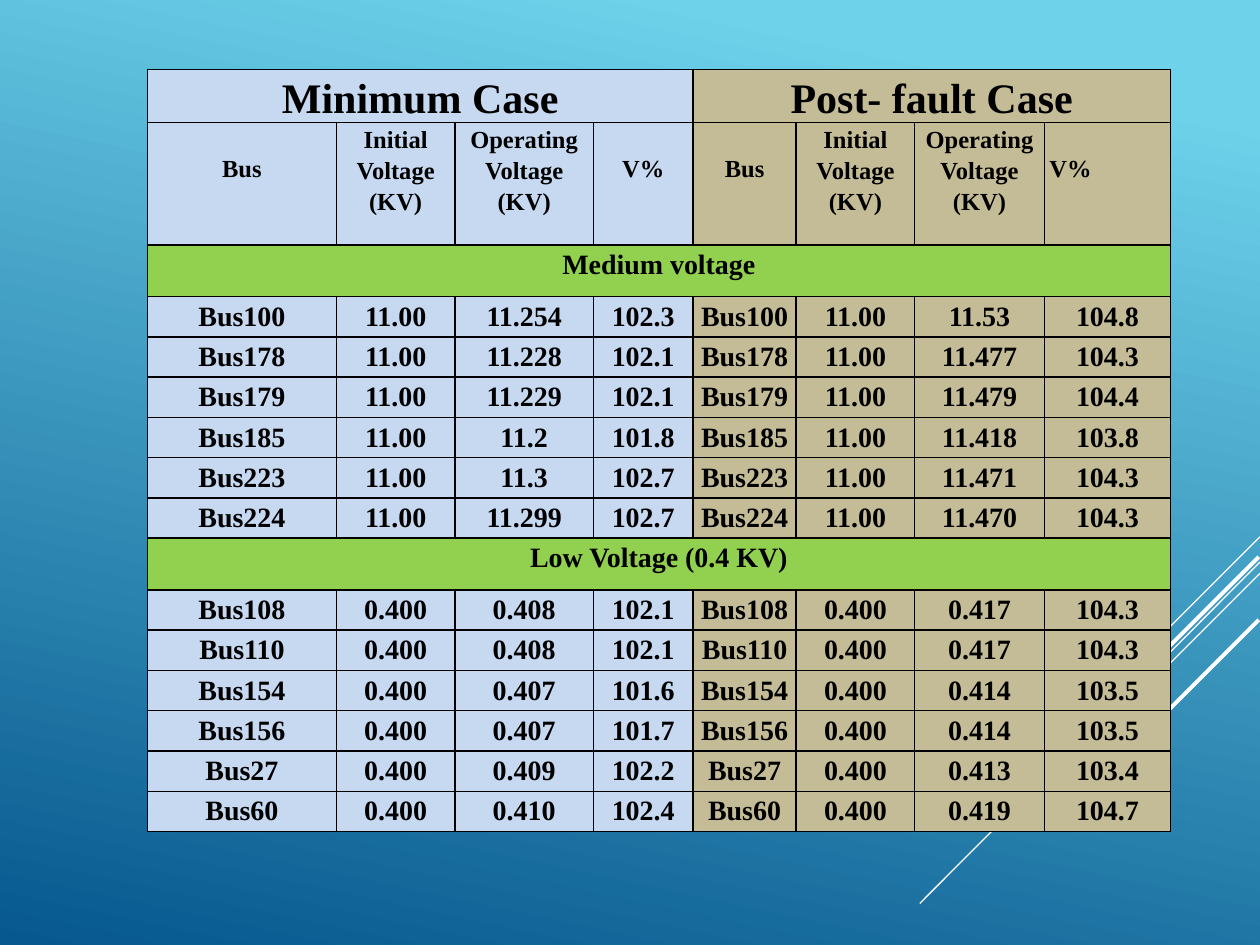
from typing import NamedTuple

from lxml.etree import SubElement as Sub
from pptx import Presentation
from pptx.dml.color import RGBColor
from pptx.enum.shapes import MSO_CONNECTOR as Conn
from pptx.enum.text import PP_ALIGN as Align
from pptx.oxml import parse_xml
from pptx.oxml.ns import nsdecls, qn
from pptx.util import Inches, Pt

BLUE, TAN, GREEN = "C6D9F1", "C4BC96", "92D050"
COLS = (1.5, 0.94, 1.1, 0.79, 0.82, 0.94, 1.03, 1)
HALF = len(COLS) // 2
HEADS = ("Bus", "Initial Voltage (KV)", "Operating Voltage (KV)", "V%")


class Ray(NamedTuple):
    x1: float
    y1: float
    x2: float
    y2: float
    width: float


class Read(NamedTuple):
    bus: str
    low: str
    low_pct: str
    post: str
    post_pct: str


class Group(NamedTuple):
    title: str
    base: str
    reads: tuple


RAYS = (
    Ray(10, 4.26, 9.17, 5.09, 0.75),
    Ray(10, 4.46, 7.3, 7.17, 0.75),
    Ray(10, 4.55, 8.28, 6.27, 0.75),
    Ray(9.99, 4.42, 8.42, 5.99, 2.25),
    Ray(9.99, 4.92, 8.85, 6.06, 2.25),
)
GROUPS = (
    Group("Medium voltage", "11.00", (
        Read("Bus100", "11.254", "102.3", "11.53", "104.8"),
        Read("Bus178", "11.228", "102.1", "11.477", "104.3"),
        Read("Bus179", "11.229", "102.1", "11.479", "104.4"),
        Read("Bus185", "11.2", "101.8", "11.418", "103.8"),
        Read("Bus223", "11.3", "102.7", "11.471", "104.3"),
        Read("Bus224", "11.299", "102.7", "11.470", "104.3"),
    )),
    Group("Low Voltage (0.4 KV)", "0.400", (
        Read("Bus108", "0.408", "102.1", "0.417", "104.3"),
        Read("Bus110", "0.408", "102.1", "0.417", "104.3"),
        Read("Bus154", "0.407", "101.6", "0.414", "103.5"),
        Read("Bus156", "0.407", "101.7", "0.414", "103.5"),
        Read("Bus27", "0.409", "102.2", "0.413", "103.4"),
        Read("Bus60", "0.410", "102.4", "0.419", "104.7"),
    )),
)


def rgb(code: str) -> RGBColor:
    """Turn a hex string into a colour."""
    return RGBColor.from_string(code)


def paint_back(slide) -> None:
    """Fill the background with the blue gradient."""
    fill = slide.background.fill
    fill.gradient()
    fill.gradient_angle = 258
    for stop, (pos, code) in zip(fill.gradient_stops, ((0.1, "6ED2EB"), (1, "06588E"))):
        stop.position = pos
        stop.color.rgb = rgb(code)


def draw_ray(slide, ray: Ray) -> None:
    """Draw one white diagonal line."""
    line = slide.shapes.add_connector(
        Conn.STRAIGHT, Inches(ray.x1), Inches(ray.y1), Inches(ray.x2), Inches(ray.y2))
    line.line.color.rgb = rgb("FFFFFF")
    line.line.width = Pt(ray.width)
    Sub(line._element.spPr, qn("a:effectLst"))


def style_cell(cell, code: str) -> None:
    """Give a cell its fill, margins and black borders."""
    cell.fill.solid()
    cell.fill.fore_color.rgb = rgb(code)
    cell.margin_left = cell.margin_right = Inches(0.04)
    cell.margin_top = cell.margin_bottom = 0
    props = cell._tc.get_or_add_tcPr()
    for spot, side in enumerate("LRTB"):
        props.insert(spot, parse_xml(
            f'<a:ln{side} {nsdecls("a")} w="{Pt(1)}"><a:solidFill>'
            f'<a:srgbClr val="000000"/></a:solidFill></a:ln{side}>'))


def write(cell, text: str, size: int) -> None:
    """Set bold, centred text in a cell."""
    cell.text_frame.text = text
    para = cell.text_frame.paragraphs[0]
    para.alignment = Align.CENTER
    para.line_spacing = 1.15
    font = para.runs[0].font
    font.name = "Times New Roman"
    font.size = Pt(size)
    font.bold = True
    font.color.rgb = rgb("000000")


def fill_row(table, row: int, texts: tuple, size: int, codes: tuple = (BLUE, TAN)) -> None:
    """Style a row and spread its texts evenly, merging cells to fit."""
    last = len(COLS) - 1
    for col in range(len(COLS)):
        style_cell(table.cell(row, col), codes[col * len(codes) // len(COLS)])
    span = len(COLS) // len(texts)
    for spot, text in enumerate(texts):
        cell = table.cell(row, spot * span)
        if span > 1:
            cell.merge(table.cell(row, min(spot * span + span - 1, last)))
        write(cell, text, size)


def draw_table(slide) -> None:
    """Draw the table of bus voltages."""
    tall = [0.37, 0.97]
    for group in GROUPS:
        tall += [0.41] + [0.32] * len(group.reads)
    table = slide.shapes.add_table(
        len(tall), len(COLS), Inches(1.17), Inches(0.55),
        Inches(sum(COLS)), Inches(sum(tall))).table
    table.first_row = table.horz_banding = False
    for col, width in zip(table.columns, COLS):
        col.width = Inches(width)
    for row, height in zip(table.rows, tall):
        row.height = Inches(height)

    fill_row(table, 0, ("Minimum Case", "Post- fault Case"), 24)
    fill_row(table, 1, HEADS * 2, 14)
    for col in (0, HALF - 1, HALF, 2 * HALF - 1):
        table.cell(1, col).margin_top = Inches(0.23)
    table.cell(1, 2 * HALF - 1).text_frame.paragraphs[0].alignment = Align.LEFT

    row = 2
    for group in GROUPS:
        fill_row(table, row, (group.title,), 16, (GREEN,))
        for row, read in enumerate(group.reads, row + 1):
            fill_row(table, row, (read.bus, group.base, read.low, read.low_pct,
                                  read.bus, group.base, read.post, read.post_pct), 16)
        row += 1


def main() -> None:
    """Build the slide and save it."""
    deck = Presentation()
    deck.slide_width, deck.slide_height = Inches(10), Inches(7.5)
    slide = deck.slides.add_slide(deck.slide_layouts[6])
    paint_back(slide)
    for ray in RAYS:
        draw_ray(slide, ray)
    draw_table(slide)
    deck.save("out.pptx")


if __name__ == "__main__":
    main()
